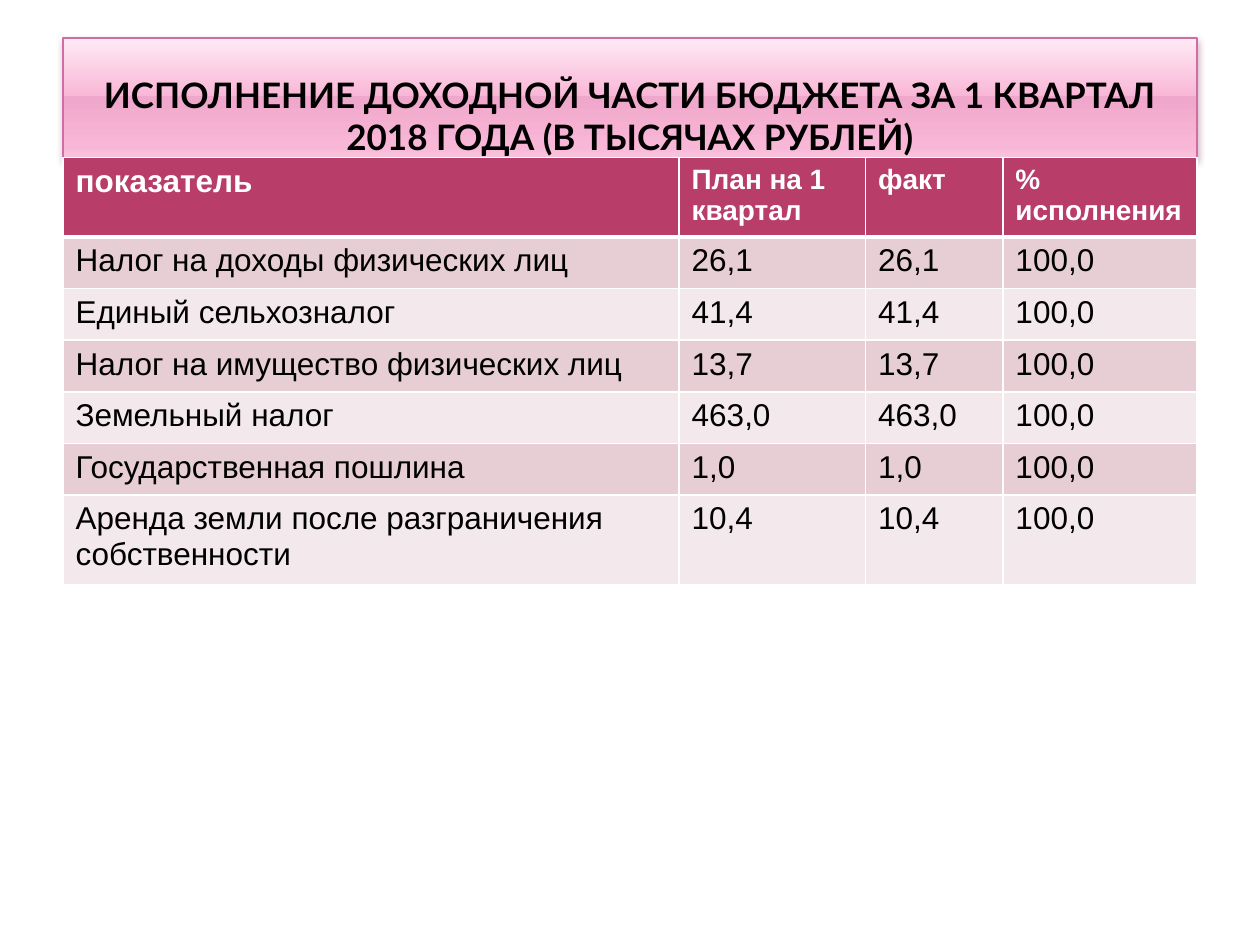
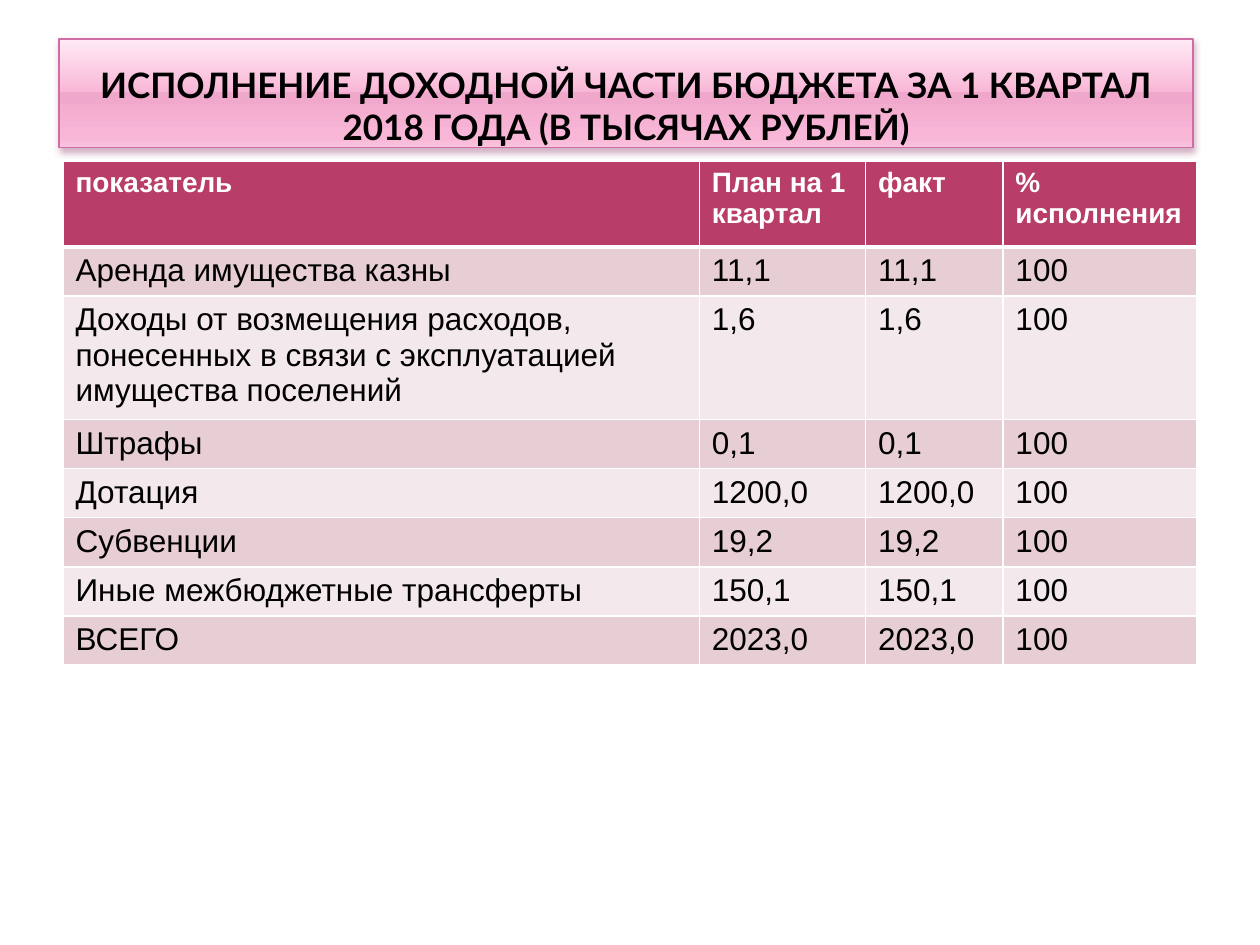
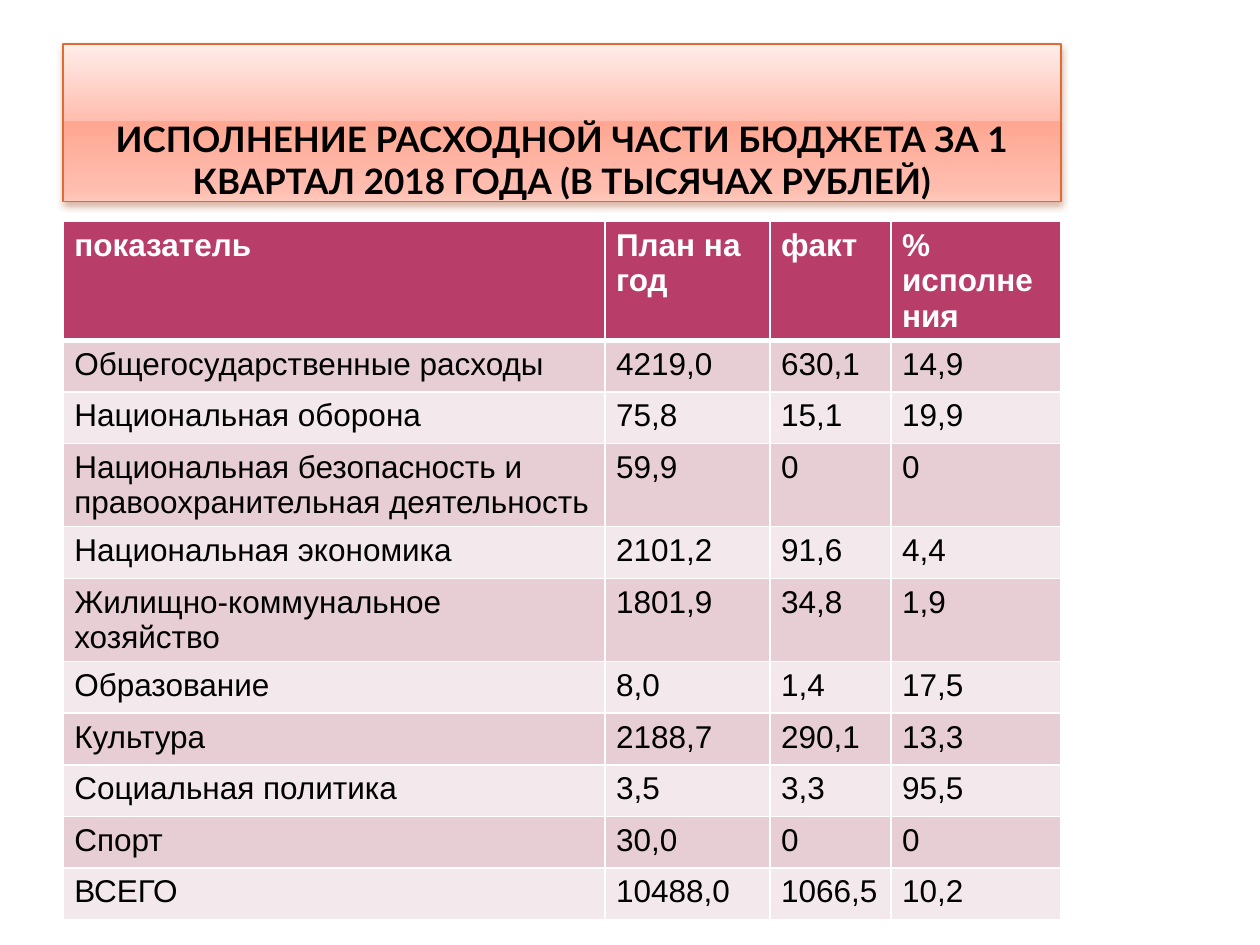
from dataclasses import dataclass
from lxml import etree
from pptx import Presentation
from pptx.dml.color import RGBColor
from pptx.enum.text import MSO_ANCHOR, MSO_AUTO_SIZE, PP_ALIGN
from pptx.oxml import parse_xml
from pptx.oxml.ns import nsdecls
from pptx.util import Pt

PX = 9144  # EMU in one px, 100 px to the inch


@dataclass(frozen=True)
class Theme:
    title_font: str = "Lato"
    table_font: str = "Arial"
    title_size: int = 20
    body_size: int = 18
    small_size: int = 16
    text: str = "000000"
    text_outline: str = "5E1A50"
    white: str = "FFFFFF"
    header: str = "B83D68"
    bands: tuple = ("E6CED4", "F3E8EB")
    stops: tuple = (0, 49, 49, 92, 100)
    # gradient colours, line, shadow
    pink: tuple = (("FFEAF4", "F9B7D7", "EFA7CB", "F9B7D7", "F8C4DD"), "CF6DA4", "893263")
    coral: tuple = (("FFEDEA", "FFBDAF", "FFA793", "FFBDAF", "FFC8BC"), "DE6C36", "9C3707")


theme = Theme()


def add_xml(parent, markup, index=None):
    """Put a DrawingML element, given without its namespace, into parent."""
    tag, rest = markup.split(" ", 1)
    element = parse_xml(f"{tag} {nsdecls('a')} {rest}")
    parent.insert(len(parent) if index is None else index, element)


def style_runs(frame, font_name, size, color, bold):
    for para in frame.paragraphs:
        for span in para.runs:
            span.font.name = font_name
            span.font.size = Pt(size)
            span.font.bold = bold
            span.font.color.rgb = RGBColor.from_string(color)


# Content of the slides
income_title = "ИСПОЛНЕНИЕ ДОХОДНОЙ ЧАСТИ БЮДЖЕТА ЗА 1 КВАРТАЛ 2018 ГОДА (В ТЫСЯЧАХ РУБЛЕЙ)"
expense_title = "ИСПОЛНЕНИЕ РАСХОДНОЙ ЧАСТИ БЮДЖЕТА ЗА 1 КВАРТАЛ 2018 ГОДА (В ТЫСЯЧАХ РУБЛЕЙ)"
income_header = ("показатель", "План на 1 квартал", "факт", "% исполнения")
expense_header = ("показатель", "План на год", "факт", "% исполнения")
small, body = theme.small_size, theme.body_size

slides = [
    dict(
        title=income_title, band=(50, 30, 900, 95), palette=theme.pink,
        table_top=125, columns=(489, 148, 109, 154), side_margin=10,
        row_heights=[63] + [41] * 5 + [71],
        header_sizes=(body, small, small, small),
        rows=[
            income_header,
            ("Налог на доходы физических лиц", "26,1", "26,1", "100,0"),
            ("Единый сельхозналог", "41,4", "41,4", "100,0"),
            ("Налог на имущество физических лиц", "13,7", "13,7", "100,0"),
            ("Земельный налог", "463,0", "463,0", "100,0"),
            ("Государственная пошлина", "1,0", "1,0", "100,0"),
            ("Аренда земли после разграничения собственности", "10,4", "10,4", "100,0"),
        ],
    ),
    dict(
        title=income_title, band=(47, 31, 900, 86), palette=theme.pink,
        table_top=128, columns=(505, 132, 109, 154), side_margin=10,
        row_heights=[68, 39, 98] + [39] * 5,
        header_sizes=(small,) * 4,
        rows=[
            income_header,
            ("Аренда имущества казны", "11,1", "11,1", "100"),
            ("Доходы от возмещения расходов, понесенных в связи с эксплуатацией "
             "имущества поселений", "1,6", "1,6", "100"),
            ("Штрафы", "0,1", "0,1", "100"),
            ("Дотация", "1200,0", "1200,0", "100"),
            ("Субвенции", "19,2", "19,2", "100"),
            ("Иные межбюджетные трансферты", "150,1", "150,1", "100"),
            ("ВСЕГО", "2023,0", "2023,0", "100"),
        ],
    ),
    dict(
        title=expense_title, band=(50, 35, 792, 125), palette=theme.coral,
        table_top=176, columns=(430, 131, 96, 135), side_margin=9,
        row_heights=[41] * 11,
        header_sizes=(body,) * 4,
        rows=[
            expense_header,
            ("Общегосударственные расходы", "4219,0", "630,1", "14,9"),
            ("Национальная оборона", "75,8", "15,1", "19,9"),
            ("Национальная безопасность и правоохранительная деятельность", "59,9", "0", "0"),
            ("Национальная экономика", "2101,2", "91,6", "4,4"),
            ("Жилищно-коммунальное хозяйство", "1801,9", "34,8", "1,9"),
            ("Образование", "8,0", "1,4", "17,5"),
            ("Культура", "2188,7", "290,1", "13,3"),
            ("Социальная политика", "3,5", "3,3", "95,5"),
            ("Спорт", "30,0", "0", "0"),
            ("ВСЕГО", "10488,0", "1066,5", "10,2"),
        ],
    ),
]

deck = Presentation()
deck.slide_width, deck.slide_height = 1000 * PX, 750 * PX
title_only = deck.slide_layouts[5]

for content in slides:
    page = deck.slides.add_slide(title_only)

    # Title band: position, gradient, line and shadow
    box = page.shapes.title
    box.left, box.top, box.width, box.height = (length * PX for length in content["band"])
    colors, line_color, shadow_color = content["palette"]
    properties = box.element.spPr
    stops = "".join(
        f'<a:gs pos="{stop * 1000}"><a:srgbClr val="{color}"/></a:gs>'
        for stop, color in zip(theme.stops, colors))
    add_xml(properties, f'<a:gradFill rotWithShape="1"><a:gsLst>{stops}</a:gsLst>'
                        '<a:lin ang="5400000" scaled="0"/></a:gradFill>')
    box.line.color.rgb = RGBColor.from_string(line_color)
    box.line.width = Pt(0.9)
    add_xml(properties, '<a:effectLst ><a:outerShdw blurRad="50800" dist="25400" dir="5400000" '
                        f'rotWithShape="0"><a:srgbClr val="{shadow_color}">'
                        '<a:alpha val="38000"/></a:srgbClr></a:outerShdw></a:effectLst>')

    # Title text
    frame = box.text_frame
    frame.text = content["title"]
    frame.word_wrap = True
    frame.auto_size = MSO_AUTO_SIZE.NONE
    frame.vertical_anchor = MSO_ANCHOR.BOTTOM
    frame.margin_left = frame.margin_right = 5 * PX
    frame.margin_top = frame.margin_bottom = 0
    frame.paragraphs[0].alignment = PP_ALIGN.CENTER
    style_runs(frame, theme.title_font, theme.title_size, theme.text, True)
    add_xml(frame.paragraphs[0].runs[0].font._element,
            f'<a:ln w="500"><a:solidFill><a:srgbClr val="{theme.text_outline}"/>'
            '</a:solidFill></a:ln>', 0)

    # Budget table
    rows, columns, heights = content["rows"], content["columns"], content["row_heights"]
    table = page.shapes.add_table(
        len(rows), len(columns), 50 * PX, content["table_top"] * PX,
        sum(columns) * PX, sum(heights) * PX).table
    for column, width in zip(table.columns, columns):
        column.width = width * PX
    for row, height in zip(table.rows, heights):
        row.height = height * PX

    for row_number, values in enumerate(rows):
        is_header = row_number == 0
        fill_color = theme.header if is_header else theme.bands[(row_number - 1) % 2]
        for column_number, value in enumerate(values):
            cell = table.cell(row_number, column_number)
            cell.text_frame.text = value
            size = content["header_sizes"][column_number] if is_header else body
            style_runs(cell.text_frame, theme.table_font, size,
                       theme.white if is_header else theme.text, is_header)
            cell.margin_left = cell.margin_right = content["side_margin"] * PX
            cell.margin_top = cell.margin_bottom = 5 * PX

            # White rules, thicker below the header
            widths = {"L": 1, "R": 1, "T": 3 if row_number == 1 else 1, "B": 3 if is_header else 1}
            for side, points in widths.items():
                add_xml(cell._tc.get_or_add_tcPr(),
                        f'<a:ln{side} w="{Pt(points)}"><a:solidFill>'
                        f'<a:srgbClr val="{theme.white}"/></a:solidFill></a:ln{side}>')
            cell.fill.solid()
            cell.fill.fore_color.rgb = RGBColor.from_string(fill_color)

deck.save("out.pptx")
